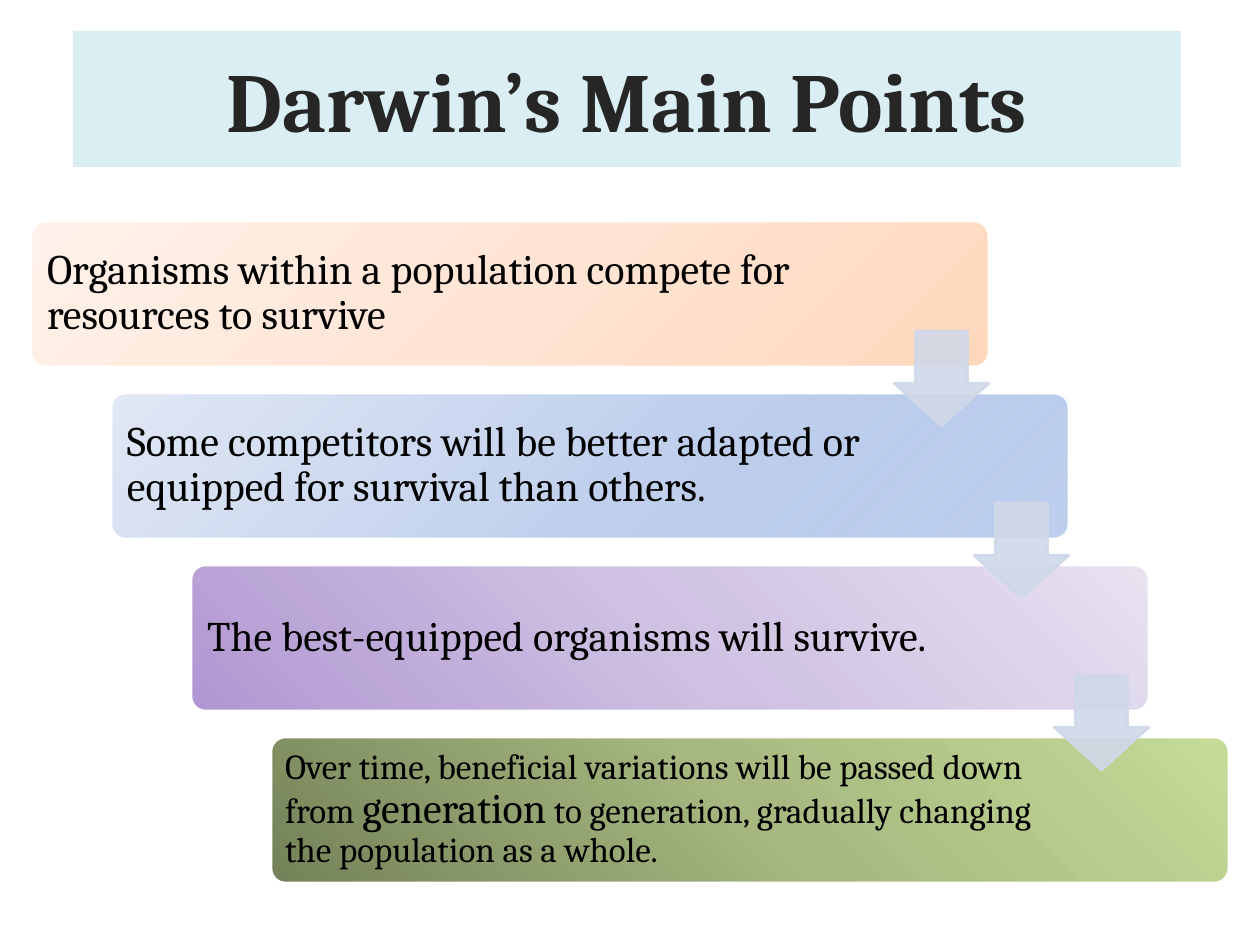
from dataclasses import dataclass

from pptx import Presentation, oxml, util as u
from pptx.dml import color
from pptx.enum import shapes, text
from pptx.oxml import ns

PX = 914400 / 126


@dataclass(frozen=True)
class Theme:
    font: str = "Cambria"
    title_size: int = 48
    body_size: int = 24
    small_size: int = 20
    title_fill: str = "DBEEF4"
    title_ink: str = "262626"
    ink: str = "000000"
    edge: str = "FFFFFF"
    arrow: str = "D0D8E8"
    arrow_alpha: int = 90
    line_width: float = 1.5


@dataclass(frozen=True)
class Area:
    left: int
    top: int
    width: int
    height: int

    def shifted(self, x: int, y: int) -> "Area":
        return Area(self.left + x, self.top + y, self.width, self.height)

    def emu(self) -> list[int]:
        return [px(n) for n in (self.left, self.top, self.width, self.height)]


@dataclass(frozen=True)
class Phrase:
    words: str
    size: int


@dataclass(frozen=True)
class Step:
    phrases: tuple[Phrase, ...]
    colors: tuple[str, str, str]
    direction: str
    first_alpha: int = 100
    inset: int = 12


THEME = Theme()
STEP_X, STEP_Y = 80, 172
TITLE = Area(73, 31, 1108, 136)
BAR = Area(31, 221, 958, 146)
LABEL = Area(35, 225, 775, 137)
ARROW = Area(894, 331, 95, 95)


def linear(degrees: int) -> str:
    return f'<a:lin ang="{degrees * 60000}" scaled="0"/>'


def radial(left: int, top: int, right: int, bottom: int) -> str:
    """Circular gradient whose centre is given by percent insets."""
    sides = zip("ltrb", (left, top, right, bottom))
    rect = " ".join(f'{side}="{value * 1000}"' for side, value in sides)
    return f'<a:path path="circle"><a:fillToRect {rect}/></a:path>'


STEPS = (
    Step((Phrase("Organisms within a population compete for resources to survive", THEME.body_size),),
         ("FFD8BC", "FFE5D5", "FFF2EA"), linear(225)),
    Step((Phrase("Some competitors will be better adapted or equipped for survival than others.",
                 THEME.body_size),),
         ("9AB5E4", "C2D1ED", "E1E8F5"), radial(100, 100, 0, 0), first_alpha=65),
    Step((Phrase("The best-equipped organisms will survive.", THEME.body_size),),
         ("B197D2", "CEC1E2", "E7E1F0"), radial(0, 100, 100, 0)),
    Step((Phrase("Over time, beneficial variations will be passed down from ", THEME.small_size),
          Phrase("generation", THEME.body_size),
          Phrase(" to generation, gradually changing the population as a whole.", THEME.small_size)),
         ("748259", "A6B87F", "C5DB97"), linear(315), inset=10),
)


def px(length: int) -> int:
    return round(length * PX)


def rgb(value: str) -> color.RGBColor:
    return color.RGBColor.from_string(value)


def add_block(page, kind, area: Area, fill: str, line: str | None = None):
    shape = page.shapes.add_shape(kind, *area.emu())
    shape.shadow.inherit = False
    shape.fill.solid()
    shape.fill.fore_color.rgb = rgb(fill)
    if line is None:
        shape.line.fill.background()
    else:
        shape.line.color.rgb = rgb(line)
        shape.line.width = u.Pt(THEME.line_width)
    return shape


def add_span(para, phrase: Phrase, ink: str, bold: bool = False) -> None:
    span = para.add_run()
    span.text = phrase.words
    span.font.name = THEME.font
    span.font.size = u.Pt(phrase.size)
    span.font.bold = bold
    span.font.color.rgb = rgb(ink)


def set_gradient(shape, step: Step) -> None:
    alphas = (step.first_alpha, 100, 100)
    stops = "".join(
        f'<a:gs pos="{place * 1000}"><a:srgbClr val="{value}">'
        f'<a:alpha val="{alpha * 1000}"/></a:srgbClr></a:gs>'
        for place, value, alpha in zip((0, 50, 100), step.colors, alphas))
    gradient = oxml.parse_xml(
        f'<a:gradFill {ns.nsdecls("a")} rotWithShape="1">'
        f'<a:gsLst>{stops}</a:gsLst>{step.direction}</a:gradFill>')
    properties = shape._element.spPr
    properties.replace(properties.find(ns.qn("a:solidFill")), gradient)


def add_title(page) -> None:
    banner = add_block(page, shapes.MSO_SHAPE.RECTANGLE, TITLE, THEME.title_fill)
    frame = banner.text_frame
    frame.word_wrap = True
    frame.vertical_anchor = text.MSO_ANCHOR.MIDDLE
    para = frame.paragraphs[0]
    para.alignment = text.PP_ALIGN.CENTER
    add_span(para, Phrase("Darwin’s Main Points", THEME.title_size), THEME.title_ink, bold=True)


def add_step(page, step: Step, index: int) -> None:
    x, y = index * STEP_X, index * STEP_Y
    bar = add_block(page, shapes.MSO_SHAPE.ROUNDED_RECTANGLE, BAR.shifted(x, y),
                    step.colors[0], THEME.edge)
    bar.adjustments[0] = 0.1
    set_gradient(bar, step)

    box = page.shapes.add_textbox(*LABEL.shifted(x, y).emu())
    frame = box.text_frame
    frame.word_wrap = True
    frame.vertical_anchor = text.MSO_ANCHOR.MIDDLE
    frame.margin_left = frame.margin_right = px(step.inset)
    frame.margin_top = frame.margin_bottom = px(step.inset)
    para = frame.paragraphs[0]
    para.alignment = text.PP_ALIGN.LEFT
    para.line_spacing = 0.9
    for phrase in step.phrases:
        add_span(para, phrase, THEME.ink)


def add_arrow(page, index: int) -> None:
    area = ARROW.shifted(index * STEP_X, index * STEP_Y)
    arrow = add_block(page, shapes.MSO_SHAPE.DOWN_ARROW, area, THEME.arrow, THEME.arrow)
    arrow.adjustments[0] = 0.55
    arrow.adjustments[1] = 0.45
    for tint in arrow._element.spPr.iter(ns.qn("a:srgbClr")):
        tint.append(oxml.parse_xml(
            f'<a:alpha {ns.nsdecls("a")} val="{THEME.arrow_alpha * 1000}"/>'))


def main() -> None:
    deck = Presentation()
    deck.slide_width, deck.slide_height = px(1260), px(945)
    page = deck.slides.add_slide(deck.slide_layouts[6])
    add_title(page)
    for index, step in enumerate(STEPS):
        add_step(page, step, index)
    for index in range(len(STEPS) - 1):
        add_arrow(page, index)
    deck.save("out.pptx")


if __name__ == "__main__":
    main()
